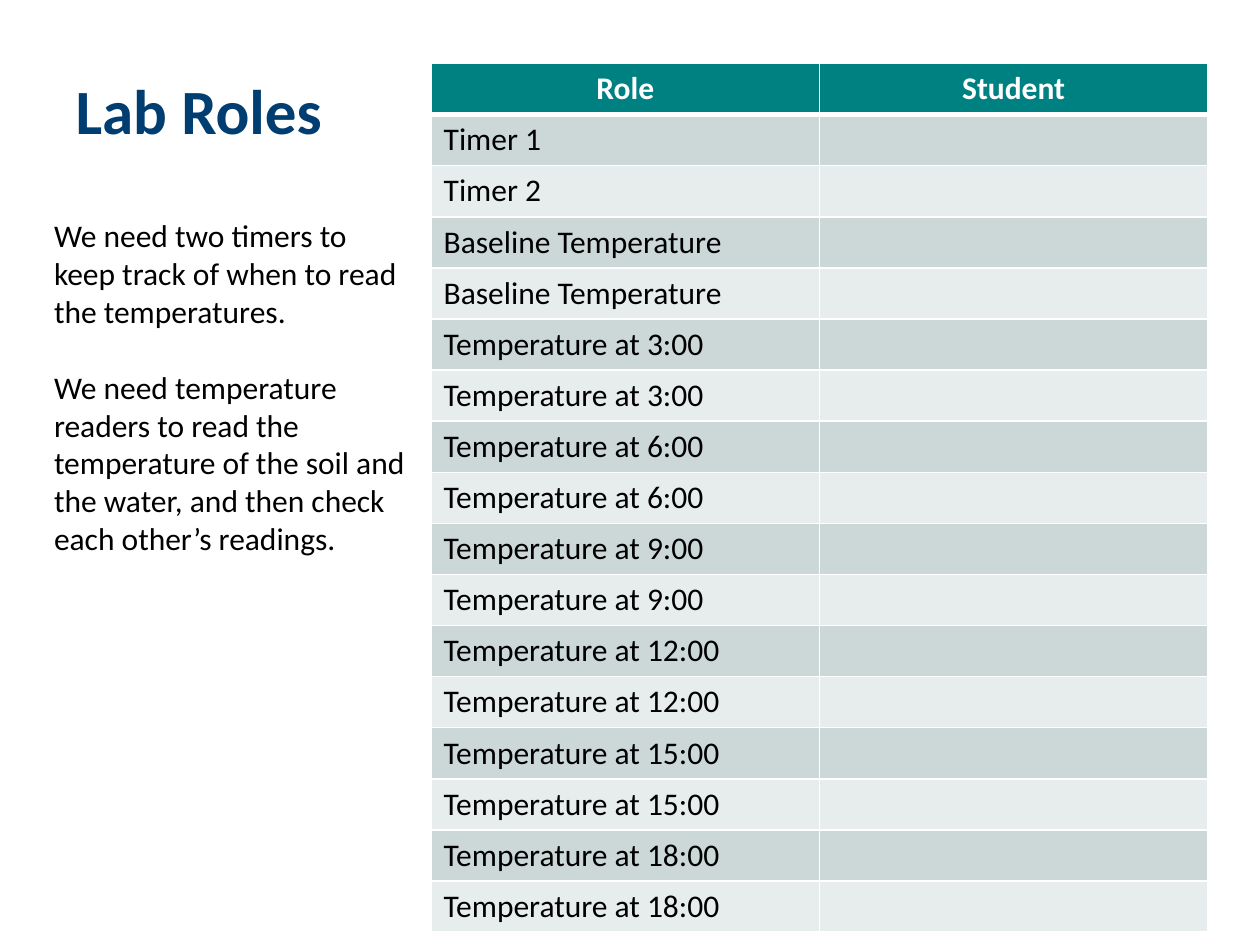
from dataclasses import dataclass

from lxml.etree import SubElement
from pptx import Presentation
from pptx.dml.color import RGBColor
from pptx.enum.text import MSO_ANCHOR, PP_ALIGN
from pptx.oxml.ns import qn
from pptx.util import Cm, Pt


@dataclass(frozen=True)
class Theme:
    font: str = "Calibri"
    navy: str = "003D71"
    teal: str = "008181"
    dark: str = "CCD8D8"
    light: str = "E7EDED"
    white: str = "FFFFFF"
    black: str = "000000"
    title: int = 36
    body: int = 18
    gap: int = 22
    thin: int = 1
    thick: int = 3


class Page:
    """Holds the theme and the slide that is being filled."""

    def __init__(self, slide, theme):
        self.slide = slide
        self.theme = theme

    def style(self, frame, size, color, bold=False, align=PP_ALIGN.LEFT):
        for para in frame.paragraphs:
            para.alignment = align
            for run in para.runs:
                font = run.font
                font.name = self.theme.font
                font.size = Pt(size)
                font.bold = bold
                font.color.rgb = RGBColor.from_string(color)

    def title(self, text, left, top, width, height):
        shape = self.slide.shapes.title
        shape.left, shape.top = Cm(left), Cm(top)
        shape.width, shape.height = Cm(width), Cm(height)
        frame = shape.text_frame
        frame.text = text
        frame.vertical_anchor = MSO_ANCHOR.MIDDLE
        self.style(frame, self.theme.title, self.theme.navy, bold=True)

    def text(self, paras, left, top, width, height):
        box = self.slide.shapes.add_textbox(
            Cm(left), Cm(top), Cm(width), Cm(height))
        frame = box.text_frame
        frame.word_wrap = True
        frame.text = "\n".join(paras)
        for para in frame.paragraphs[1:]:
            para.space_before = Pt(self.theme.gap)
        self.style(frame, self.theme.body, self.theme.black)

    def border(self, cell, base):
        """Draw white lines on all four sides, the bottom one base points wide."""
        props = cell._tc.get_or_add_tcPr()
        thin = self.theme.thin
        sides = {"L": thin, "R": thin, "T": thin, "B": base}
        for index, (side, width) in enumerate(sides.items()):
            line = SubElement(props, qn(f"a:ln{side}"), w=str(Pt(width)))
            fill = SubElement(line, qn("a:solidFill"))
            SubElement(fill, qn("a:srgbClr"), val=self.theme.white)
            props.insert(index, line)

    def table(self, heads, roles, left, top, width, row):
        theme = self.theme
        count = len(roles) + 1
        grid = self.slide.shapes.add_table(
            count, len(heads), Cm(left), Cm(top),
            Cm(width), Cm(row * count)).table
        for line in grid.rows:
            line.height = Cm(row)
        for col, head in enumerate(heads):
            cell = grid.cell(0, col)
            cell.text_frame.text = head
            self.style(cell.text_frame, theme.body, theme.white,
                       bold=True, align=PP_ALIGN.CENTER)
        for index, role in enumerate(roles, 1):
            frame = grid.cell(index, 0).text_frame
            frame.text = role
            self.style(frame, theme.body, theme.black)
        for index, line in enumerate(grid.rows):
            band = theme.dark if index % 2 else theme.light
            color = band if index else theme.teal
            for cell in line.cells:
                cell.fill.solid()
                cell.fill.fore_color.rgb = RGBColor.from_string(color)
                self.border(cell, theme.thin if index else theme.thick)


def main():
    deck = Presentation()
    deck.slide_width, deck.slide_height = Cm(25.4), Cm(19.05)
    page = Page(deck.slides.add_slide(deck.slide_layouts[5]), Theme())

    page.title("Lab Roles", 1.27, 1.47, 6.78, 1.47)

    times = [f"Temperature at {minute}:00" for minute in range(3, 19, 3)]
    pairs = ["Baseline Temperature"] + times
    roles = ["Timer 1", "Timer 2"] + [role for role in pairs for _ in range(2)]
    page.table(["Role", "Student"], roles, 8.69, 1.28, 15.66, 1.02)

    page.text([
        "We need two timers to keep track of when to read the temperatures.",
        "We need temperature readers to read the temperature of the soil "
        "and the water, and then check each other’s readings.",
    ], 0.84, 4.23, 7.62, 7.95)

    deck.save("out.pptx")


if __name__ == "__main__":
    main()
